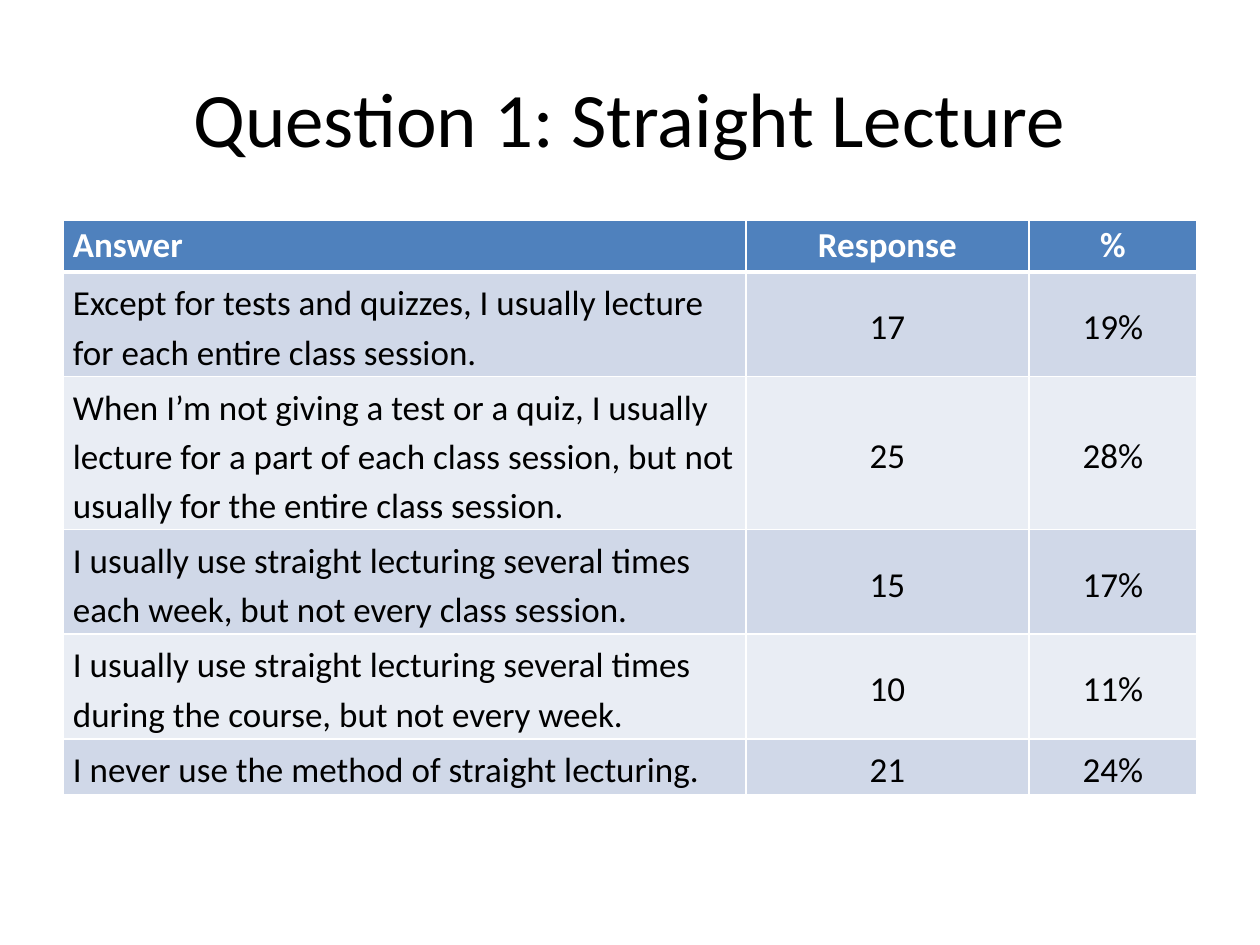
from lxml.etree import SubElement
from pptx import Presentation
from pptx.dml.color import RGBColor
from pptx.enum.text import MSO_ANCHOR as Anchor, PP_ALIGN as Align
from pptx.oxml.ns import qn
from pptx.util import Pt

PX = 914400 / 126
FONT = "Calibri"
BLACK = RGBColor(0x00, 0x00, 0x00)
WHITE = RGBColor(0xFF, 0xFF, 0xFF)
BLUE = RGBColor(0x4F, 0x81, 0xBD)
BANDS = (RGBColor(0xD0, 0xD8, 0xE8), RGBColor(0xE9, 0xED, 0xF4))

COLUMN_WIDTHS = (683, 283, 168)
ROW_HEIGHT = 52
HEADER = ("Answer", "Response", "%")
ANSWERS = (
    ("Except for tests and quizzes, I usually lecture for each entire class session.", "17", "19%"),
    ("When I’m not giving a test or a quiz, I usually lecture for a part of each class session, "
     "but not usually for the entire class session.", "25", "28%"),
    ("I usually use straight lecturing several times each week, but not every class session.", "15", "17%"),
    ("I usually use straight lecturing several times during the course, but not every week.", "10", "11%"),
    ("I never use the method of straight lecturing.", "21", "24%"),
)


def px(length):
    return round(length * PX)


def write(frame, text, *, size, color=BLACK, bold=False, align=Align.LEFT, spacing=None):
    para = frame.paragraphs[0]
    para.alignment = align
    if spacing:
        para.line_spacing = spacing
    span = para.add_run()
    span.text = text
    span.font.name = FONT
    span.font.size = Pt(size)
    span.font.bold = bold
    span.font.color.rgb = color


def add_borders(cell, *, top=1, bottom=1):
    properties = cell._tc.get_or_add_tcPr()
    for side, width in (("L", 1), ("R", 1), ("T", top), ("B", bottom)):
        line = SubElement(properties, qn(f"a:ln{side}"), w=str(Pt(width)))
        fill = SubElement(line, qn("a:solidFill"))
        SubElement(fill, qn("a:srgbClr"), val=str(WHITE))


def add_title(page, left, top, width, height):
    box = page.shapes.add_textbox(px(left), px(top), px(width), px(height))
    frame = box.text_frame
    frame.word_wrap = True
    frame.vertical_anchor = Anchor.MIDDLE
    write(frame, "Question 1: Straight Lecture", size=44, align=Align.CENTER)


def add_answer_table(page, left, top):
    rows = (HEADER, *ANSWERS)
    table = page.shapes.add_table(
        len(rows), len(HEADER), px(left), px(top),
        px(sum(COLUMN_WIDTHS)), px(ROW_HEIGHT * len(rows))).table
    for column, width in zip(table.columns, COLUMN_WIDTHS):
        column.width = px(width)

    for r, texts in enumerate(rows):
        table.rows[r].height = px(ROW_HEIGHT)
        is_header = r == 0
        for c, text in enumerate(texts):
            cell = table.cell(r, c)
            cell.margin_left = cell.margin_right = px(10)
            cell.margin_top = cell.margin_bottom = px(4)
            cell.vertical_anchor = Anchor.TOP if is_header else Anchor.MIDDLE
            # A thick rule parts the header from the answers
            add_borders(cell, top=3 if r == 1 else 1, bottom=3 if is_header else 1)
            cell.fill.solid()
            cell.fill.fore_color.rgb = BLUE if is_header else BANDS[(r - 1) % 2]
            write(cell.text_frame, text, size=20, bold=is_header,
                  color=WHITE if is_header else BLACK,
                  align=Align.CENTER if c else Align.LEFT,
                  spacing=None if is_header else 1.15)


def main():
    deck = Presentation()
    deck.slide_width, deck.slide_height = px(1260), px(945)
    page = deck.slides.add_slide(deck.slide_layouts[6])
    add_title(page, 63, 38, 1134, 157)
    add_answer_table(page, 63, 220)
    deck.save("out.pptx")


if __name__ == "__main__":
    main()
